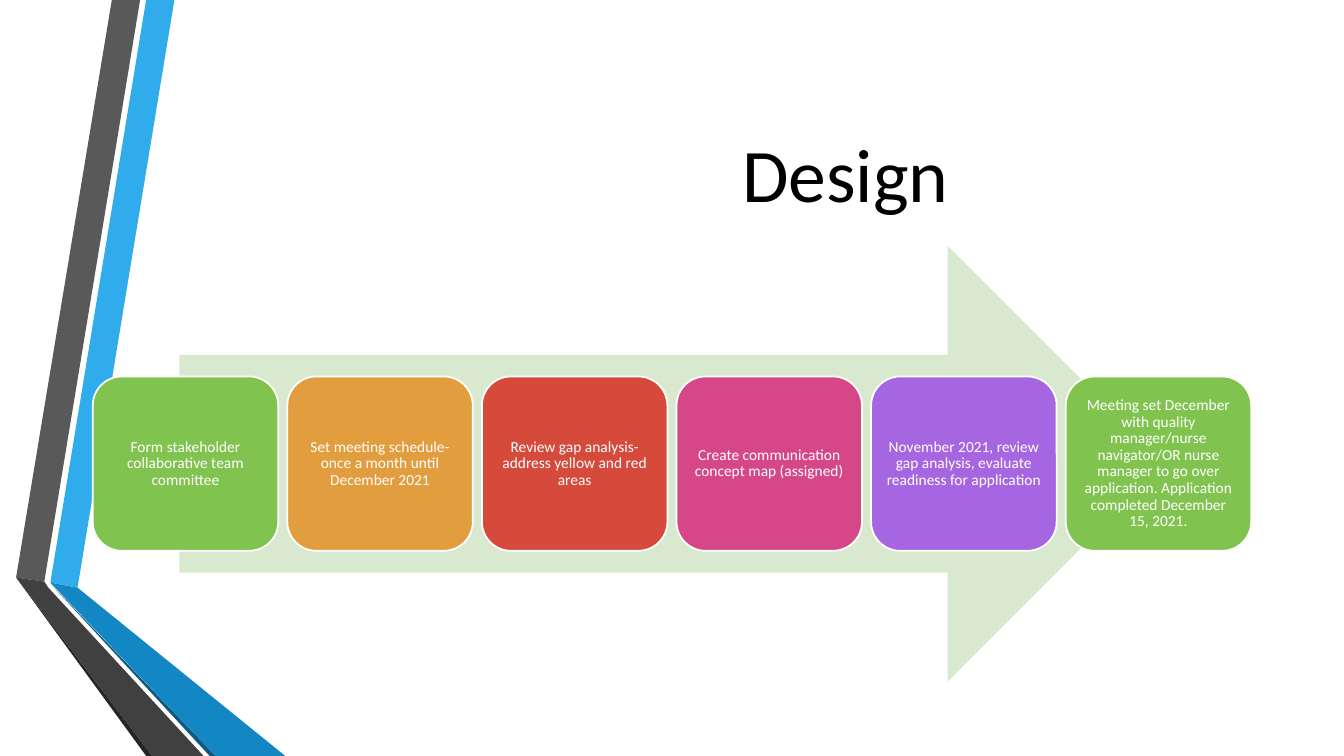
"""Build the Design slide: a row of step cards over a wide arrow."""
from pptx import Presentation
from pptx import util as u
from pptx.dml.color import RGBColor
from pptx.enum import shapes, text

WIDTH, HEIGHT = 13.33, 7.5
TITLE = "Design"
STEPS = [
    ("Form stakeholder collaborative team committee", "80C34F"),
    ("Set meeting schedule-once a month until December 2021", "E29D3E"),
    ("Review gap analysis-address yellow and red areas", "D64A3B"),
    ("Create communication concept map (assigned)", "D64787"),
    ("November 2021, review gap analysis, evaluate readiness for application", "A666E1"),
    ("Meeting set December with quality manager/nurse navigator/OR nurse manager "
     "to go over application. Application completed December 15, 2021.", "80C34F"),
]
RIBBONS = [
    ("30ACEC", [(0.5, 5.78), (0.77, 5.83), (1.73, 0), (1.45, 0)]),
    ("595959", [(1.39, 0), (1.11, 0), (0.16, 5.73), (0.44, 5.77)]),
    ("262626", [(0.16, 5.73), (1.45, HEIGHT), (1.51, HEIGHT)]),
    ("0C5A82", [(0.5, 5.79), (2.08, HEIGHT), (2.14, HEIGHT)]),
    ("1287C3", [(0.5, 5.78), (2.14, HEIGHT), (2.83, HEIGHT), (0.77, 5.83)]),
    ("404040", [(2.02, HEIGHT), (0.48, 5.83), (0.44, 5.77), (0.16, 5.73), (1.51, HEIGHT)]),
]
TITLE_BOX = (1.62, 0.75, 10.96, 1.92)
TITLE_INDENT = 2.62
ARROW_BOX = (1.78, 2.44, 9.78, 4.32)
CARD_LEFT, CARD_WIDTH, CARD_HEIGHT, CARD_PITCH = 0.92, 1.84, 1.73, 1.93


def color(value):
    return RGBColor.from_string(value)


def paint(shape, fill, line=None):
    shape.shadow.inherit = False
    shape.fill.solid()
    shape.fill.fore_color.rgb = color(fill)
    if line:
        shape.line.color.rgb = color(line)
        shape.line.width = u.Pt(1.25)
    else:
        shape.line.fill.background()


def write(shape, words, size, ink, inset=0.05, left=None, spacing=1.0):
    frame = shape.text_frame
    frame.word_wrap = True
    frame.auto_size = text.MSO_AUTO_SIZE.NONE
    frame.vertical_anchor = text.MSO_ANCHOR.MIDDLE
    frame.margin_right = frame.margin_top = frame.margin_bottom = u.Inches(inset)
    frame.margin_left = u.Inches(inset if left is None else left)
    paragraph = frame.paragraphs[0]
    paragraph.alignment = text.PP_ALIGN.CENTER
    paragraph.line_spacing = spacing
    run = paragraph.add_run()
    run.text = words
    run.font.name = "Calibri"
    run.font.size = u.Pt(size)
    run.font.color.rgb = color(ink)


def add_ribbon(slide, fill, points):
    corners = [(u.Inches(x), u.Inches(y)) for x, y in points]
    builder = slide.shapes.build_freeform(*corners[0])
    builder.add_line_segments(corners[1:], close=True)
    paint(builder.convert_to_shape(), fill)


def add_block(slide, kind, box, fill, line=None):
    shape = slide.shapes.add_shape(kind, *map(u.Inches, box))
    paint(shape, fill, line)
    return shape


def main():
    presentation = Presentation()
    presentation.slide_width = u.Inches(WIDTH)
    presentation.slide_height = u.Inches(HEIGHT)
    slide = presentation.slides.add_slide(presentation.slide_layouts[5])

    for fill, points in RIBBONS:
        add_ribbon(slide, fill, points)

    title = slide.shapes.title
    title.left, title.top, title.width, title.height = map(u.Inches, TITLE_BOX)
    write(title, TITLE, 54, "000000", left=TITLE_INDENT)

    add_block(slide, shapes.MSO_SHAPE.RIGHT_ARROW, ARROW_BOX, "D8E9D0")
    card_top = ARROW_BOX[1] + (ARROW_BOX[3] - CARD_HEIGHT) / 2
    for index, (words, fill) in enumerate(STEPS):
        box = (CARD_LEFT + index * CARD_PITCH, card_top, CARD_WIDTH, CARD_HEIGHT)
        card = add_block(slide, shapes.MSO_SHAPE.ROUNDED_RECTANGLE, box, fill, "FFFFFF")
        write(card, words, 11, "FFFFFF", spacing=0.9)

    presentation.save("out.pptx")


if __name__ == "__main__":
    main()
